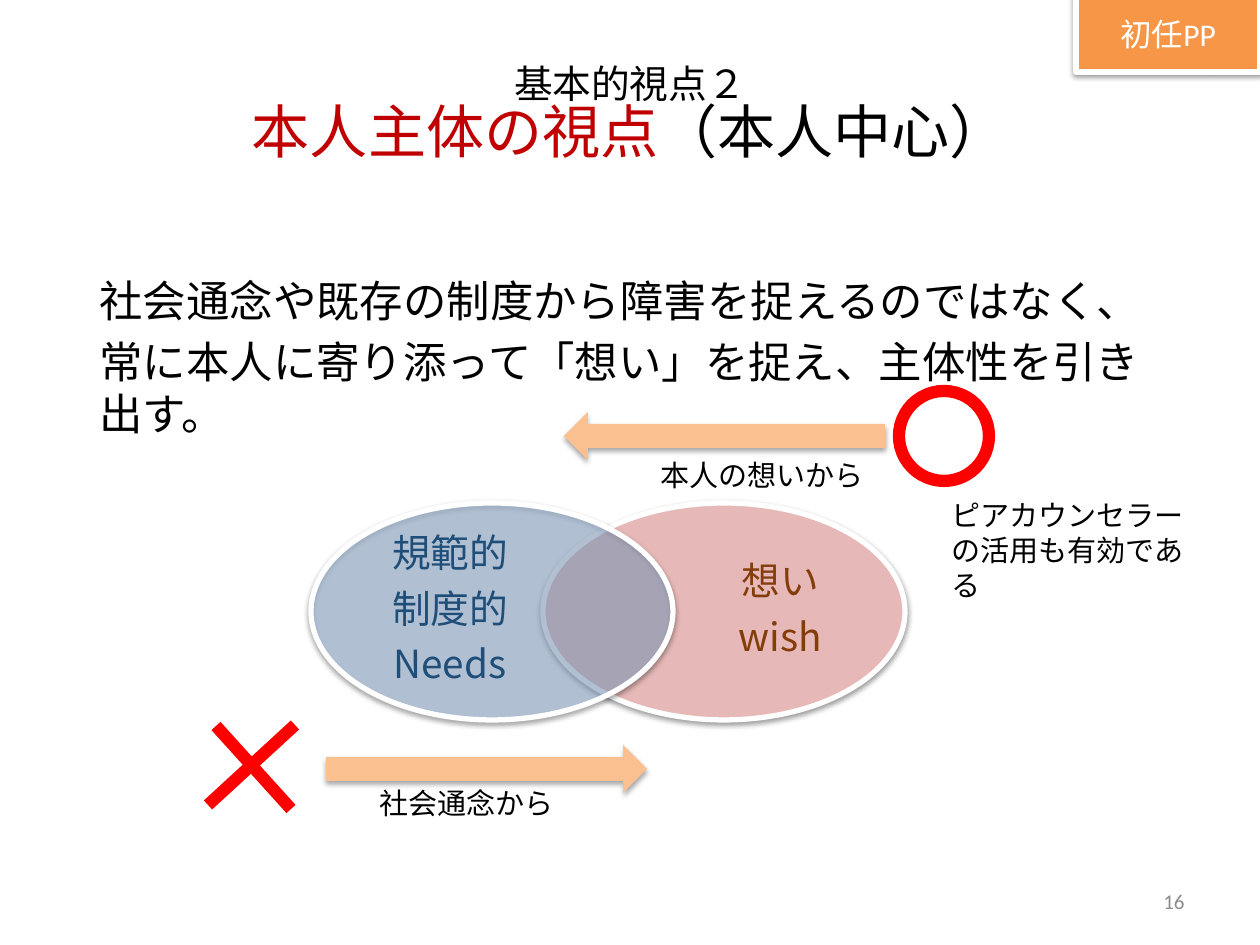
from lxml import etree
from pptx import Presentation
from pptx import util as u
from pptx.dml.color import RGBColor
from pptx.enum import shapes, text
from pptx.oxml.ns import qn

SCALE = 914400 / 126  # EMU per px
C = {"ink": "000000", "accent": "C00000", "red": "FF0000", "white": "FFFFFF",
     "badge": "F79646", "arrow": "FAC090", "pink": "E6B9B8", "blue": "95B3D7",
     "wish": "843C0B", "needs": "1F4E79", "grey": "8C8C8C"}
LATIN, CJK = "Calibri", "Noto Sans CJK JP"
ALIGN, ANCHOR = text.PP_ALIGN, text.MSO_ANCHOR
SHAPE = shapes.MSO_SHAPE


def px(*values):
    return [u.Emu(round(v * SCALE)) for v in values]


def rgb(name):
    return RGBColor.from_string(C[name])


def add_run(p, words, size, color="ink", font=LATIN):
    r = p.add_run()
    r.text = words
    r.font.size, r.font.name = u.Pt(size), font
    r.font.color.rgb = rgb(color)
    ea = etree.SubElement(r._r.get_or_add_rPr(), qn("a:ea"))
    ea.set("typeface", font)


def write(sp, lines, size, color="ink", font=LATIN, align=ALIGN.LEFT,
          anchor=ANCHOR.TOP, wrap=True, inset=None, before=0, after=0, spacing=None):
    """Write one paragraph for each line."""
    tf = sp.text_frame
    tf.word_wrap, tf.vertical_anchor = wrap, anchor
    if inset is not None:
        tf.margin_left = tf.margin_right = tf.margin_top = tf.margin_bottom = px(inset)[0]
    for i, line in enumerate(lines):
        p = tf.add_paragraph() if i else tf.paragraphs[0]
        p.alignment, p.line_spacing = align, spacing
        p.space_before, p.space_after = u.Pt(before), u.Pt(after)
        add_run(p, line, size, color, font)
    return tf


def add_text(parent, box, lines, size, **fmt):
    return write(parent.shapes.add_textbox(*px(*box)), lines, size, **fmt)


def add_effects(sp, shadow=None):
    """Add an effect list, empty or with a downward shadow of (opacity %, distance pt)."""
    effects = etree.SubElement(sp._element.spPr, qn("a:effectLst"))
    if shadow:
        opacity, dist = shadow
        outer = etree.SubElement(effects, qn("a:outerShdw"), blurRad=str(u.Pt(3.1)),
                                 dist=str(u.Pt(dist)), dir="5400000", rotWithShape="0")
        clr = etree.SubElement(outer, qn("a:srgbClr"), val=C["ink"])
        etree.SubElement(clr, qn("a:alpha"), val=str(opacity * 1000))


def add_shape(parent, kind, box, fill=None, line=None, width=3, alpha=None, shadow=None):
    sp = parent.shapes.add_shape(kind, *px(*box))
    if fill:
        sp.fill.solid()
        sp.fill.fore_color.rgb = rgb(fill)
        if alpha:
            clr = sp._element.spPr.find(qn("a:solidFill"))[0]
            etree.SubElement(clr, qn("a:alpha"), val=str(alpha * 1000))
    else:
        sp.fill.background()
    if line:
        sp.line.color.rgb, sp.line.width = rgb(line), u.Pt(width)
    else:
        sp.line.fill.background()
    add_effects(sp, shadow)
    return sp


def title(s, box):
    tf = add_text(s, box, ["基本的視点２"], 22.1, font=CJK, align=ALIGN.CENTER,
                  anchor=ANCHOR.MIDDLE, spacing=0.84)
    p = tf.paragraphs[0]
    p.add_line_break()
    add_run(p, "本人主体の視点", 33.2, "accent", CJK)
    add_run(p, "（本人中心）", 33.2)


def body(s, box):
    add_text(s, box, ["社会通念や既存の制度から障害を捉えるのではなく、",
                      "常に本人に寄り添って「想い」を捉え、主体性を引き出す。"], 24.8, before=5)


def oval(s, box, label_box, lines, fill, color, alpha=None):
    """Oval with its label, which is placed relative to the oval."""
    x, y, _, _ = box
    dx, dy, w, h = label_box
    grp = s.shapes.add_group_shape()
    add_shape(grp, SHAPE.OVAL, box, fill, "white", alpha=alpha, shadow=(38, 1.6))
    add_text(grp, (x + dx, y + dy, w, h), lines, 22.1, color=color, font=CJK,
             align=ALIGN.CENTER, anchor=ANCHOR.MIDDLE, inset=3,
             spacing=u.Pt(24), after=7.7)


def venn(s, box):
    x, y, w, h = box
    oval_w = 362
    oval(s, (x + w - oval_w, y, oval_w, h), (163, 54, 149, 106),
         ["想い", "wish"], "pink", "wish")
    oval(s, (x, y, oval_w, h), (67, 24, 144, 166),
         ["規範的", "制度的", "Needs"], "blue", "needs", alpha=50)


def arrow(s, box, label, label_box, rotation=0):
    """Block arrow with a caption placed relative to it."""
    x, y, _, _ = box
    dx, dy, w, h = label_box
    sp = add_shape(s, SHAPE.RIGHT_ARROW, box, "arrow", shadow=(35, 1.8))
    sp.rotation = rotation
    add_text(s, (x + dx, y + dy, w, h), [label], 16.6, wrap=False)


def cross(s, box):
    x, y, w, h = box
    strokes = [(x + 8, y + 1, x + w - 4, y + h), (x, y + h - 4, x + w, y)]
    for ends in strokes:
        ln = s.shapes.add_connector(shapes.MSO_CONNECTOR.STRAIGHT, *px(*ends))
        ln.line.color.rgb, ln.line.width = rgb("red"), u.Pt(7)
        add_effects(ln)


def badge(s, box):
    sp = add_shape(s, SHAPE.RECTANGLE, box, "badge", "white", shadow=(38, 1.6))
    write(sp, ["初任PP"], 18, "white", align=ALIGN.CENTER, anchor=ANCHOR.MIDDLE)


def main():
    prs = Presentation()
    prs.slide_width, prs.slide_height = px(1260, 945)
    s = prs.slides.add_slide(prs.slide_layouts[6])

    # Heading, statement and page number
    title(s, (63, 38, 1134, 157))
    body(s, (87, 268, 1086, 110))
    add_text(s, (903, 876, 294, 50), ["16"], 12, color="grey",
             align=ALIGN.RIGHT, anchor=ANCHOR.MIDDLE)

    # Overlapping ovals and the two approaches
    venn(s, (311, 503, 594, 217))
    arrow(s, (326, 745, 321, 48), "社会通念から", (41, 34, 199, 48))
    arrow(s, (564, 412, 321, 48), "本人の想いから", (84, 39, 237, 48), rotation=180)

    # Right and wrong marks, with a remark
    add_shape(s, SHAPE.OVAL, (899, 391, 90, 90), line="red", width=7)
    cross(s, (208, 725, 87, 84))
    add_text(s, (939, 491, 273, 83), ["ピアカウンセラーの活用も有効である"], 16.6)

    # Corner badge
    badge(s, (1076, -4, 184, 76))
    prs.save("out.pptx")


if __name__ == "__main__":
    main()
